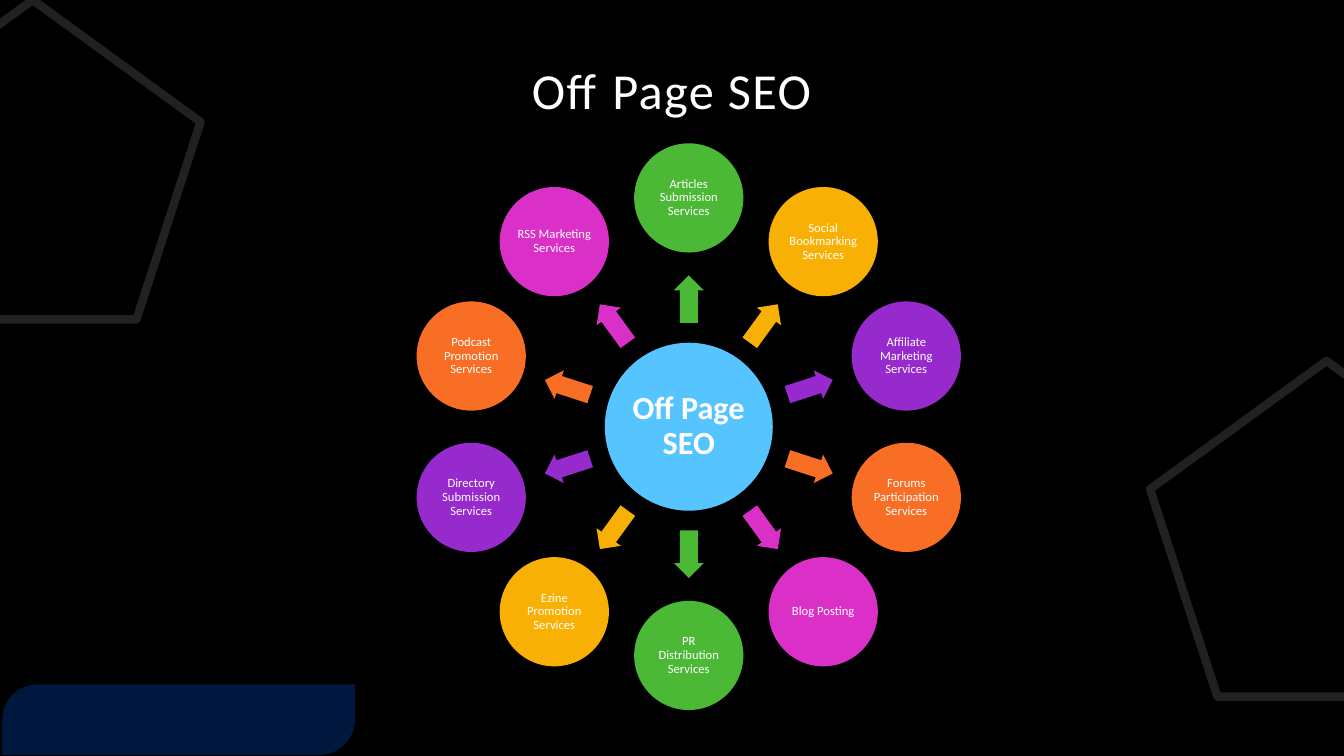
import math

import pptx
import pptx.dml.color
import pptx.enum.shapes
import pptx.enum.text
import pptx.oxml
import pptx.oxml.ns
import pptx.util

Pt = pptx.util.Pt
SHAPE = pptx.enum.shapes.MSO_SHAPE
ANCHOR = pptx.enum.text.MSO_ANCHOR
WHITE = "FFFFFF"
COLORS = ["4BB836", "F8B004", "972ACD", "F86E24", "DB30C7"]
SERVICES = [
    "Articles Submission Services",
    "Social Bookmarking Services",
    "Affiliate Marketing Services",
    "Forums Participation Services",
    "Blog Posting",
    "PR Distribution Services",
    "Ezine Promotion Services",
    "Directory Submission Services",
    "Podcast Promotion Services",
    "RSS Marketing Services",
]


def rgb(value):
    return pptx.dml.color.RGBColor.from_string(value)


def set_alpha(sp, percent):
    for color in sp._element.spPr.iter(pptx.oxml.ns.qn("a:srgbClr")):
        alpha = pptx.oxml.parse_xml(f'<a:alpha {pptx.oxml.ns.nsdecls("a")} val="{percent * 1000}"/>')
        color.append(alpha)


def add_shape(s, kind, box, fill=None, line=None, width=1, alpha=100, rotation=0, adj=()):
    sp = s.shapes.add_shape(kind, *[Pt(v) for v in box])
    sp.shadow.inherit = False
    sp.rotation = rotation
    for i, value in enumerate(adj):
        sp.adjustments[i] = value
    if fill:
        sp.fill.solid()
        sp.fill.fore_color.rgb = rgb(fill)
    else:
        sp.fill.background()
    if line:
        sp.line.color.rgb = rgb(line)
        sp.line.width = Pt(width)
    else:
        sp.line.fill.background()
    if alpha < 100:
        set_alpha(sp, alpha)
    return sp


def set_text(sp, text, size, color=WHITE, bold=False, font="Calibri", spacing=0,
             anchor=ANCHOR.MIDDLE, insets=(7.2, 3.6)):
    tf = sp.text_frame
    tf.word_wrap = True
    tf.vertical_anchor = anchor
    tf.margin_left = tf.margin_right = Pt(insets[0])
    tf.margin_top = tf.margin_bottom = Pt(insets[1])
    p = tf.paragraphs[0]
    p.alignment = pptx.enum.text.PP_ALIGN.CENTER
    p.line_spacing = 0.9
    r = p.add_run()
    r.text = text
    r.font.size = Pt(size)
    r.font.name = font
    r.font.bold = bold
    r.font.color.rgb = rgb(color)
    if spacing:
        r.font._element.set("spc", str(spacing * 100))


def add_backdrop(s, x, y, w, h):
    s.background.fill.solid()
    s.background.fill.fore_color.rgb = rgb("000000")
    add_shape(s, SHAPE.ROUND_2_DIAG_RECTANGLE, (x + 1.6, y + h - 51.2, 252, 50.4),
              fill="002356", alpha=71, adj=(0.5, 0))
    for box in [(x - 96.5, y, 239.8, 228.2), (x + w - 138.5, y + 257.8, 252, 239.8)]:
        add_shape(s, SHAPE.REGULAR_PENTAGON, box, line=WHITE, width=6, alpha=13)


def add_title(s, x, y, w, h):
    sp = s.shapes.add_textbox(Pt(x), Pt(y), Pt(w), Pt(h))
    set_text(sp, "Off Page SEO", 36, spacing=1, anchor=ANCHOR.BOTTOM)


def add_radial_diagram(s, x, y, w, h):
    cx, cy = x + w / 2, y + h / 2
    hub, disc, arrow_w, arrow_h = 120, 78, 34, 21.4
    disc_orbit = (h - disc) / 2
    arrow_orbit = 91.1

    def centred(orbit, angle, width, height):
        left = cx + orbit * math.cos(math.radians(angle)) - width / 2
        top = cy + orbit * math.sin(math.radians(angle)) - height / 2
        return left, top, width, height

    sp = add_shape(s, SHAPE.OVAL, centred(0, 0, hub, hub), fill="56C5FF")
    set_text(sp, "Off Page SEO", 23, bold=True, insets=(2.2, 2.2))
    for i, service in enumerate(SERVICES):
        angle = 270 + i * 360 / len(SERVICES)
        color = COLORS[i % len(COLORS)]
        add_shape(s, SHAPE.RIGHT_ARROW, centred(arrow_orbit, angle, arrow_w, arrow_h),
                  fill=color, rotation=angle % 360, adj=(0.6, 0.5))
        sp = add_shape(s, SHAPE.OVAL, centred(disc_orbit, angle, disc, disc), fill=color)
        set_text(sp, service, 9, insets=(0.8, 0.8))


def main():
    prs = pptx.Presentation()
    prs.slide_width, prs.slide_height = Pt(960), Pt(540)
    s = prs.slides.add_slide(prs.slide_layouts[6])
    add_backdrop(s, 0, 0, 960, 540)
    add_title(s, 119.8, 41.8, 720, 48)
    add_radial_diagram(s, 297.5, 102.4, 389, 404.8)
    prs.save("out.pptx")


if __name__ == "__main__":
    main()
